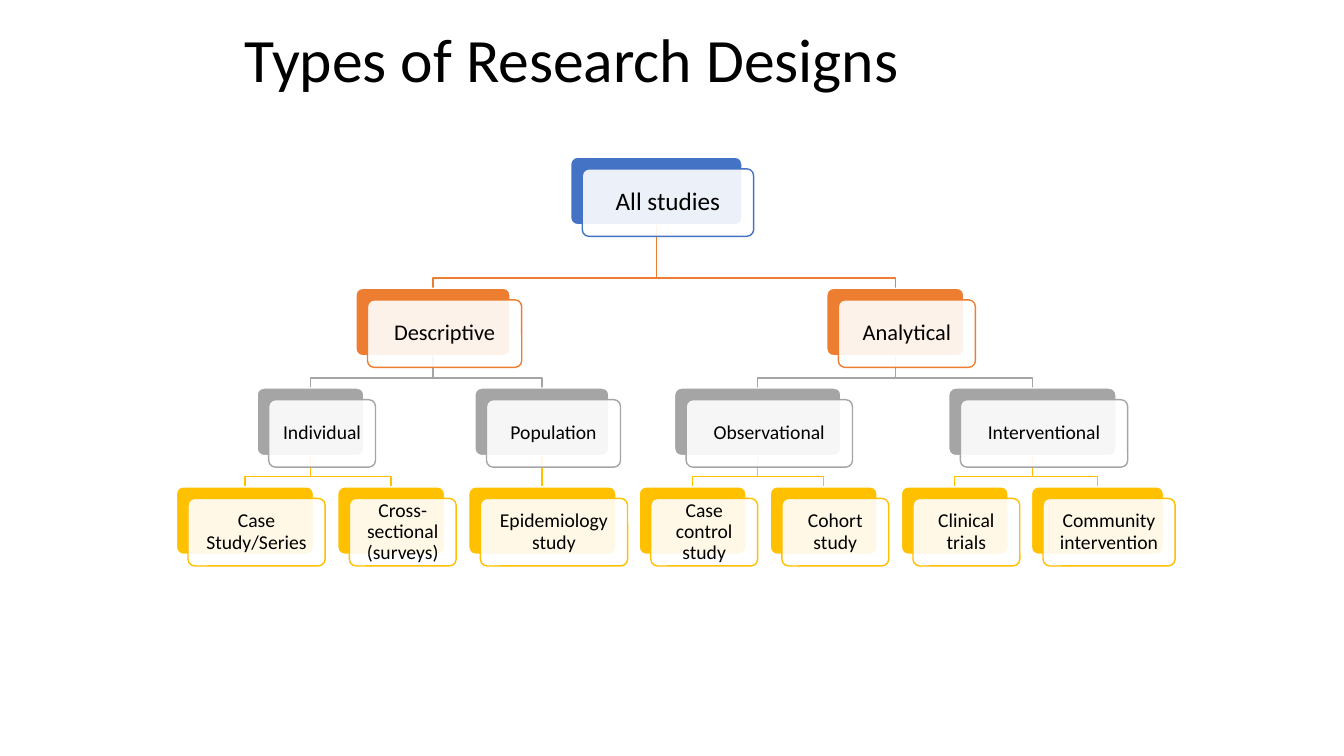
from dataclasses import dataclass
from typing import Iterator

from lxml import etree
from pptx import Presentation
from pptx.dml.color import RGBColor
from pptx.enum.shapes import MSO_CONNECTOR, MSO_SHAPE
from pptx.enum.text import MSO_ANCHOR, PP_ALIGN
from pptx.oxml.ns import qn
from pptx.util import Inches, Pt

ROUND = MSO_SHAPE.ROUNDED_RECTANGLE
LINE = MSO_CONNECTOR.STRAIGHT
MIDDLE = MSO_ANCHOR.MIDDLE
CENTER = PP_ALIGN.CENTER
LEFT = PP_ALIGN.LEFT

FONT = "Calibri"
BLACK = "000000"
WHITE = "FFFFFF"
HIGH = 0.67
SHIFT = 0.115
BEND = 0.1


@dataclass(frozen=True)
class Level:
    top: float
    color: str
    size: int
    inset: float


@dataclass(frozen=True)
class Study:
    text: str
    left: float
    width: float
    kids: tuple["Study", ...] = ()

    @property
    def mid(self) -> float:
        return self.left + self.width / 2


LEVELS = (
    Level(1.56, "4472C4", 18, 0.09),
    Level(2.86, "ED7D31", 16, 0.09),
    Level(3.85, "A5A5A5", 14, 0.08),
    Level(4.83, "FFC000", 14, 0.08),
)

TREE = Study("All studies", 5.66, 1.7, (
    Study("Descriptive", 3.53, 1.53, (
        Study("Individual", 2.55, 1.06, (
            Study("Case Study/Series", 1.75, 1.36),
            Study("Cross-sectional (surveys)", 3.35, 1.06),
        )),
        Study("Population", 4.71, 1.33, (
            Study("Epidemiology study", 4.65, 1.46),
        )),
    )),
    Study("Analytical", 8.2, 1.36, (
        Study("Observational", 6.69, 1.65, (
            Study("Case control study", 6.34, 1.06),
            Study("Cohort study", 7.64, 1.06),
        )),
        Study("Interventional", 9.41, 1.66, (
            Study("Clinical trials", 8.94, 1.06),
            Study("Community intervention", 10.23, 1.31),
        )),
    )),
))


def rgb(color: str) -> RGBColor:
    return RGBColor.from_string(color)


def walk(study: Study, depth: int = 0) -> Iterator[tuple[Study, int]]:
    yield study, depth
    for kid in study.kids:
        yield from walk(kid, depth + 1)


def stroke(shape, color: str) -> None:
    shape.line.color.rgb = rgb(color)
    shape.line.width = Pt(1)


def write(shape, text: str, size: int, align, inset: float | None = None) -> None:
    frame = shape.text_frame
    form = {"word_wrap": True, "vertical_anchor": MIDDLE}
    if inset is not None:
        sides = ("left", "top", "right", "bottom")
        form |= {f"margin_{side}": Inches(inset) for side in sides}
    for name, value in form.items():
        setattr(frame, name, value)
    para = frame.paragraphs[0]
    para.alignment = align
    para.line_spacing = 0.9
    run = para.add_run()
    run.text = text
    for name, value in {"name": FONT, "size": Pt(size)}.items():
        setattr(run.font, name, value)
    run.font.color.rgb = rgb(BLACK)


def link(shapes, study: Study, kid: Study, depth: int) -> None:
    level = LEVELS[depth + 1]
    start = LEVELS[depth].top + HIGH
    bend = level.top - BEND
    if len(study.kids) == 1:
        x = Inches(study.mid)
        wire = shapes.add_connector(LINE, x, Inches(start), x, Inches(level.top))
        etree.SubElement(wire.element.spPr, qn("a:effectLst"))
    else:
        turns = ((study.mid, bend), (kid.mid, bend), (kid.mid, level.top))
        form = shapes.build_freeform(Inches(study.mid), Inches(start))
        form.add_line_segments([(Inches(x), Inches(y)) for x, y in turns], close=False)
        wire = form.convert_to_shape()
        wire.fill.background()
        wire.shadow.inherit = False
    stroke(wire, level.color)


def plate(shapes, study: Study, top: float, shift: float, fill: str, edge: str):
    shape = shapes.add_shape(
        ROUND, Inches(study.left + shift), Inches(top + shift),
        Inches(study.width), Inches(HIGH),
    )
    shape.adjustments[0] = 0.1
    shape.shadow.inherit = False
    shape.fill.solid()
    shape.fill.fore_color.rgb = rgb(fill)
    stroke(shape, edge)
    return shape


def card(shapes, study: Study, level: Level) -> None:
    plate(shapes, study, level.top, 0, level.color, WHITE)
    front = plate(shapes, study, level.top, SHIFT, WHITE, level.color)
    tint = front.element.spPr.find(qn("a:solidFill"))[0]
    etree.SubElement(tint, qn("a:alpha"), val="90000")
    write(front, study.text, level.size, CENTER, level.inset)


def main() -> None:
    deck = Presentation()
    deck.slide_width = Inches(13.33)
    deck.slide_height = Inches(7.5)
    shapes = deck.slides.add_slide(deck.slide_layouts[6]).shapes
    title = shapes.add_textbox(Inches(2.33), Inches(0), Inches(9), Inches(1.25))
    write(title, "Types of Research Designs", 44, LEFT)
    for study, depth in walk(TREE):
        for kid in study.kids:
            link(shapes, study, kid, depth)
    for study, depth in walk(TREE):
        card(shapes, study, LEVELS[depth])
    deck.save("out.pptx")


if __name__ == "__main__":
    main()
